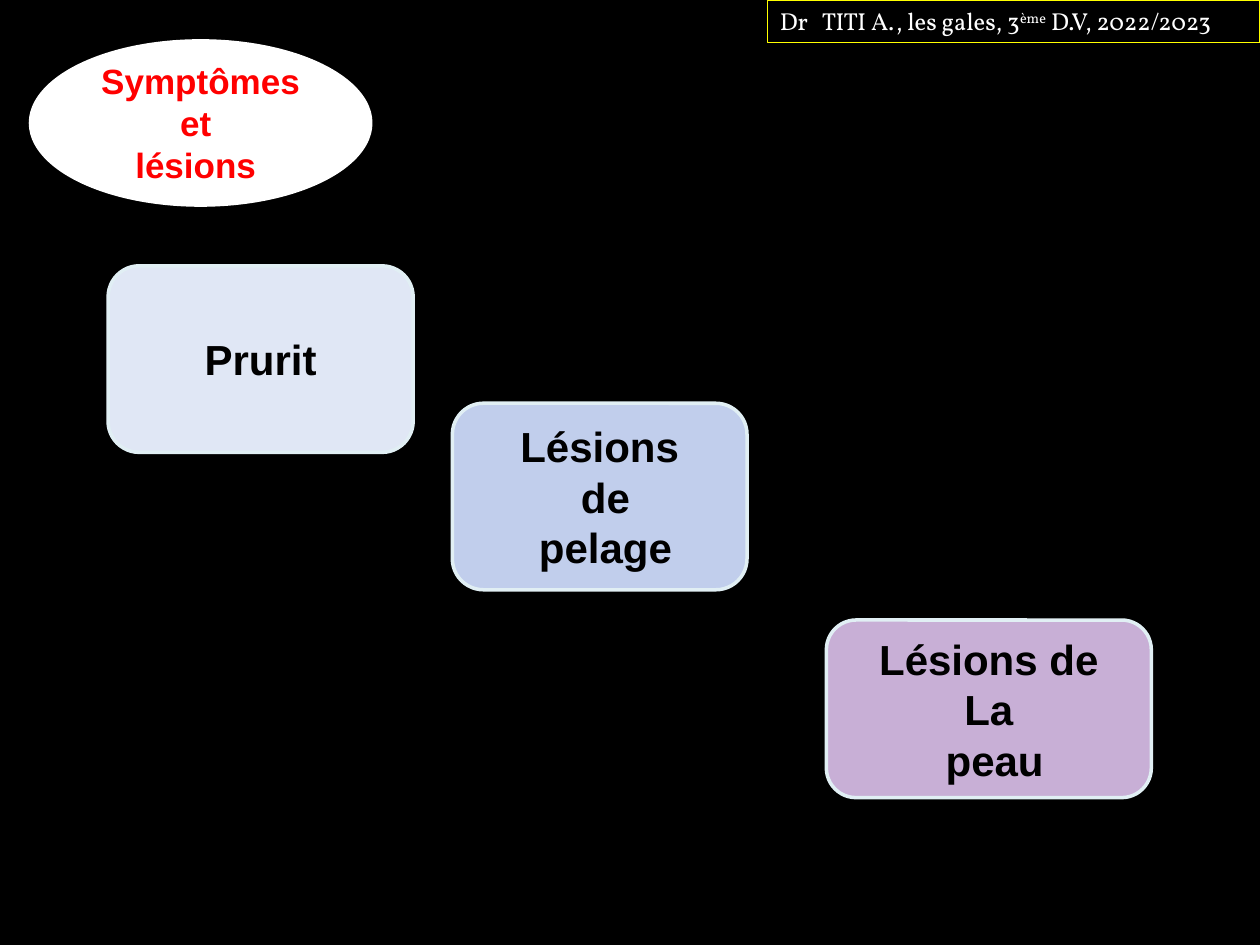
from pptx import Presentation
from pptx.dml.color import RGBColor
from pptx.enum.shapes import MSO_SHAPE
from pptx.enum.text import MSO_ANCHOR, MSO_AUTO_SIZE, PP_ALIGN
from pptx.oxml import parse_xml
from pptx.oxml.ns import nsdecls
from pptx.util import Cm, Pt

COLORS = {
    "black": "000000", "white": "FFFFFF", "red": "FF0000", "yellow": "FFFF00",
    "edge": "E1EFF4", "pale": "E0E7F5", "blue": "C1CEEC", "mauve": "C8AFD6",
}


class Deck:
    """Holds the style and the current slide, and draws its elements."""

    def __init__(self, back):
        self.prs = Presentation()
        self.prs.slide_width, self.prs.slide_height = Cm(25.4), Cm(19.05)
        self.slide = self.prs.slides.add_slide(self.prs.slide_layouts[6])
        self.paint(self.slide.background.fill, back)

    def color(self, name):
        return RGBColor.from_string(COLORS[name])

    def paint(self, fill, name):
        if name:
            fill.solid()
            fill.fore_color.rgb = self.color(name)
        else:
            fill.background()

    def shape(self, kind, box, fill, line=None, width=2):
        shape = self.slide.shapes.add_shape(kind, *map(Cm, box))
        shape.shadow.inherit = False
        self.paint(shape.fill, fill)
        self.paint(shape.line.fill, line)
        if line:
            shape.line.width = Pt(width)
        shape.text_frame.word_wrap = True
        return shape

    def style(self, run, color, **values):
        for key, value in values.items():
            setattr(run.font, key, value)
        run.font.color.rgb = self.color(color)

    def label(self, kind, box, lines, size, ink, fill, line=None):
        frame = self.shape(kind, box, fill, line).text_frame
        frame.vertical_anchor = MSO_ANCHOR.MIDDLE
        for index, text in enumerate(lines):
            para = frame.add_paragraph() if index else frame.paragraphs[0]
            para.alignment = PP_ALIGN.CENTER
            run = para.add_run()
            run.text = text
            self.style(run, ink, name="Arial", size=Pt(size), bold=True)

    def header(self, box, parts, tab):
        frame = self.shape(MSO_SHAPE.RECTANGLE, box, None, "yellow", 0.75).text_frame
        frame.auto_size = MSO_AUTO_SIZE.SHAPE_TO_FIT_TEXT
        frame.vertical_anchor = MSO_ANCHOR.TOP
        para = frame.paragraphs[0]
        para.alignment = PP_ALIGN.LEFT
        para._p.get_or_add_pPr().append(parse_xml(
            f'<a:tabLst {nsdecls("a")}><a:tab pos="{Cm(tab)}" algn="l"/></a:tabLst>'))
        for text, raised in parts:
            run = para.add_run()
            run.text = text
            self.style(run, "white", name="Vollkorn", size=Pt(14))
            if raised:
                run.font._element.set("baseline", "30000")


def main():
    deck = Deck("black")
    deck.label(MSO_SHAPE.OVAL, (0.58, 0.79, 6.93, 3.38),
               ["Symptômes", "et ", "lésions "], 20, "red", "white")
    cards = [
        ((2.18, 5.36, 6.15, 3.76), ["Prurit"], "pale"),
        ((9.12, 8.13, 5.94, 3.76), ["Lésions", " de", " pelage"], "blue"),
        ((16.66, 12.5, 6.55, 3.58), ["Lésions de", "La", " peau"], "mauve"),
    ]
    for box, lines, fill in cards:
        deck.label(MSO_SHAPE.ROUNDED_RECTANGLE, box, lines, 24, "black", fill, "edge")
    deck.header((15.47, 0, 9.93, 0.86), [
        ("Dr\tTITI A., les gales, 3", False),
        ("ème", True),
        (" D.V, 2022/2023", False),
    ], 0.85)
    deck.prs.save("out.pptx")


if __name__ == "__main__":
    main()
